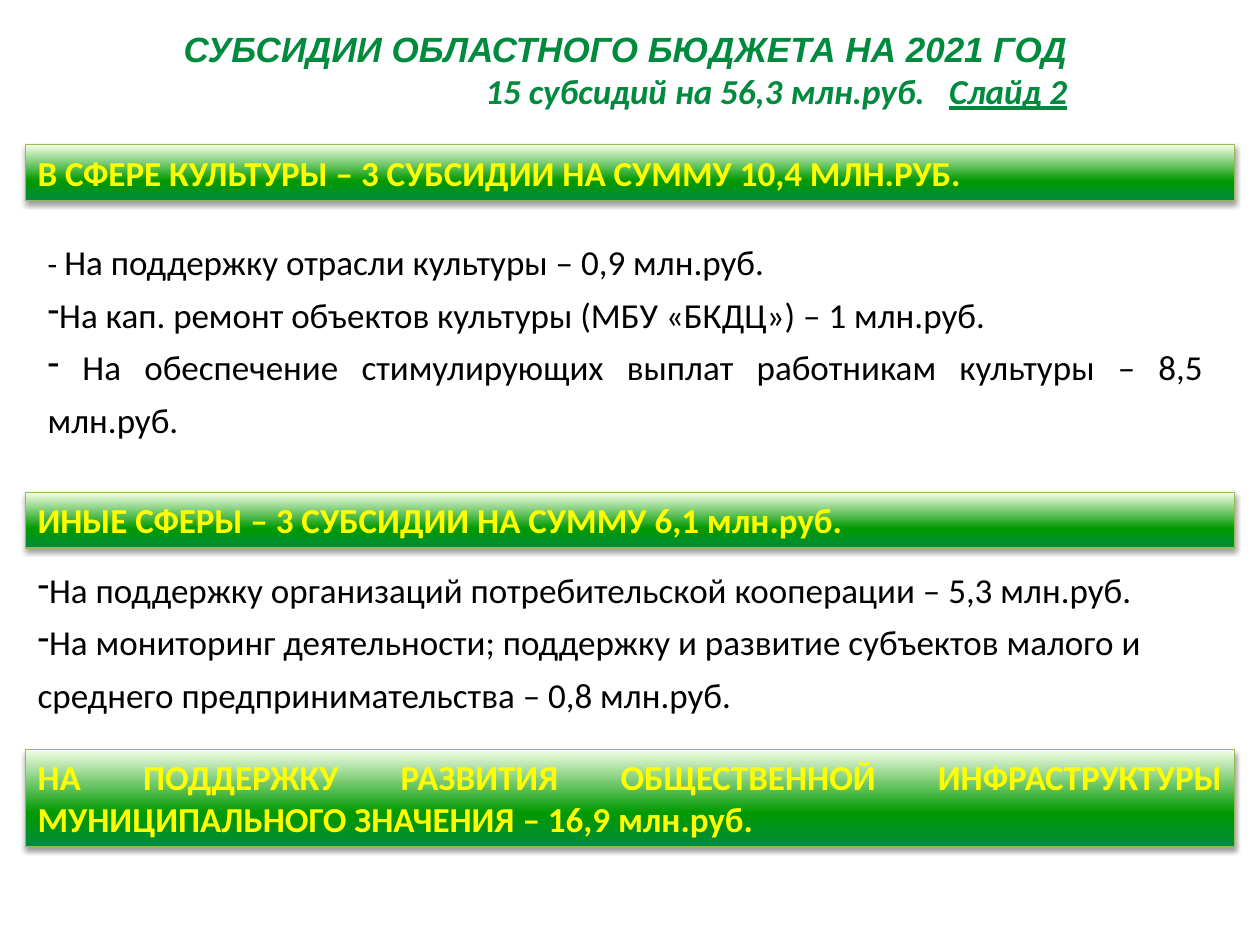
import copy
from dataclasses import dataclass

import pptx
import pptx.dml.color
import pptx.enum.shapes
import pptx.enum.text
import pptx.oxml
import pptx.oxml.ns
import pptx.util

Inches = pptx.util.Inches
Pt = pptx.util.Pt
qn = pptx.oxml.ns.qn
Align = pptx.enum.text.PP_ALIGN
Anchor = pptx.enum.text.MSO_ANCHOR
Fit = pptx.enum.text.MSO_AUTO_SIZE


@dataclass(frozen=True)
class Theme:
    green: str = "008A3E"
    ink: str = "000000"
    gold: str = "FFFF00"
    edge: str = "98B955"
    stops: tuple = ((0, "008A3E"), (0.35, "009900"), (1, "F5FFE7"))
    face: str = "Calibri"
    caps: str = "Arial"
    size: int = 20
    small: int = 18


THEME = Theme()
LEFT, WIDTH = 0.2, 9.6
SHADE = (
    f'<a:outerShdw {pptx.oxml.ns.nsdecls("a")} blurRad="{Pt(3.1)}" dist="{Pt(1.6)}" '
    'dir="5400000" rotWithShape="0"><a:srgbClr val="000000">'
    '<a:alpha val="38000"/></a:srgbClr></a:outerShdw>'
)


def rgb(hue):
    return pptx.dml.color.RGBColor.from_string(hue)


def apply(item, form):
    for key, value in form.items():
        setattr(item, key, value)


def add_run(para, text, hue, **form):
    run = para.add_run()
    run.text = text
    apply(run.font, {"name": THEME.face, "size": Pt(THEME.size)} | form)
    run.font.color.rgb = rgb(hue)
    return run


def head(slide, box):
    title = slide.shapes.title
    apply(title, dict(zip(("left", "top", "width", "height"), map(Inches, box))))
    frame = title.text_frame
    apply(frame, {"word_wrap": True, "auto_size": Fit.NONE,
                  "vertical_anchor": Anchor.MIDDLE, "margin_right": Inches(1.34)})
    para = frame.paragraphs[0]
    para.alignment = Align.RIGHT
    form = {"bold": True, "italic": True}
    add_run(para, "СУБСИДИИ ОБЛАСТНОГО БЮДЖЕТА НА 2021 ГОД", THEME.green,
            name=THEME.caps, **form)
    para.add_line_break()
    add_run(para, "15 субсидий на 56,3 млн.руб.", THEME.green, **form)
    gap = add_run(para, " ", THEME.green, **form)
    gap.font._element.set("spc", "900")
    add_run(para, "Слайд 2", THEME.green, underline=True, **form)


def band(slide, box, text, align=Align.LEFT):
    bar = slide.shapes.add_shape(
        pptx.enum.shapes.MSO_SHAPE.RECTANGLE, *map(Inches, box))
    bar.fill.gradient()
    bar.fill.gradient_angle = 90
    stops = bar._element.spPr.find(qn("a:gradFill")).find(qn("a:gsLst"))
    stops.append(copy.deepcopy(stops[0]))
    for stop, (place, hue) in zip(bar.fill.gradient_stops, THEME.stops):
        stop.position = place
        stop.color.rgb = rgb(hue)
    bar.line.color.rgb = rgb(THEME.edge)
    bar.line.width = Pt(0.75)
    bar.shadow.inherit = False
    glow = bar._element.spPr.find(qn("a:effectLst"))
    glow.append(pptx.oxml.parse_xml(SHADE))
    frame = bar.text_frame
    apply(frame, {"word_wrap": True, "vertical_anchor": Anchor.TOP,
                  "auto_size": Fit.SHAPE_TO_FIT_TEXT})
    para = frame.paragraphs[0]
    para.alignment = align
    add_run(para, text, THEME.gold, bold=True)


def dash(para):
    mark = para._p.get_or_add_pPr().makeelement(qn("a:buChar"), {"char": "-"})
    para._p.get_or_add_pPr().append(mark)


def items(slide, box, rows, align=Align.LEFT, lead=None):
    frame = slide.shapes.add_textbox(*map(Inches, box)).text_frame
    apply(frame, {"word_wrap": True, "auto_size": Fit.SHAPE_TO_FIT_TEXT})
    for i, text in enumerate(rows):
        para = frame.add_paragraph() if i else frame.paragraphs[0]
        if lead and i == 0:
            add_run(para, lead, THEME.ink, size=Pt(THEME.small))
        else:
            dash(para)
        apply(para, {"alignment": align, "line_spacing": 1.25})
        add_run(para, text, THEME.ink)


def main():
    deck = pptx.Presentation()
    apply(deck, {"slide_width": Inches(10), "slide_height": Inches(7.5)})
    slide = deck.slides.add_slide(deck.slide_layouts[5])
    head(slide, (0.12, 0.13, 9.69, 0.84))
    band(slide, (LEFT, 1.15, WIDTH, 0.44),
         "В СФЕРЕ КУЛЬТУРЫ – 3 СУБСИДИИ НА СУММУ 10,4 МЛН.РУБ.")
    items(slide, (0.28, 1.78, 9.37, 1.75), (
        "На поддержку отрасли культуры – 0,9 млн.руб.",
        "На кап. ремонт объектов культуры (МБУ «БКДЦ») – 1 млн.руб.",
        " На обеспечение стимулирующих выплат работникам культуры – 8,5 млн.руб.",
    ), Align.JUSTIFY, "- ")
    band(slide, (LEFT, 3.91, WIDTH, 0.44),
         "ИНЫЕ СФЕРЫ – 3 СУБСИДИИ НА СУММУ 6,1 млн.руб.")
    items(slide, (LEFT, 4.38, WIDTH, 1.6), (
        "На поддержку организаций потребительской кооперации – 5,3 млн.руб.",
        "На мониторинг деятельности; поддержку и развитие субъектов малого "
        "и среднего предпринимательства – 0,8 млн.руб.",
    ))
    band(slide, (LEFT, 5.95, WIDTH, 0.77),
         "НА ПОДДЕРЖКУ РАЗВИТИЯ ОБЩЕСТВЕННОЙ ИНФРАСТРУКТУРЫ "
         "МУНИЦИПАЛЬНОГО ЗНАЧЕНИЯ – 16,9 млн.руб.", Align.JUSTIFY)
    deck.save("out.pptx")


if __name__ == "__main__":
    main()
